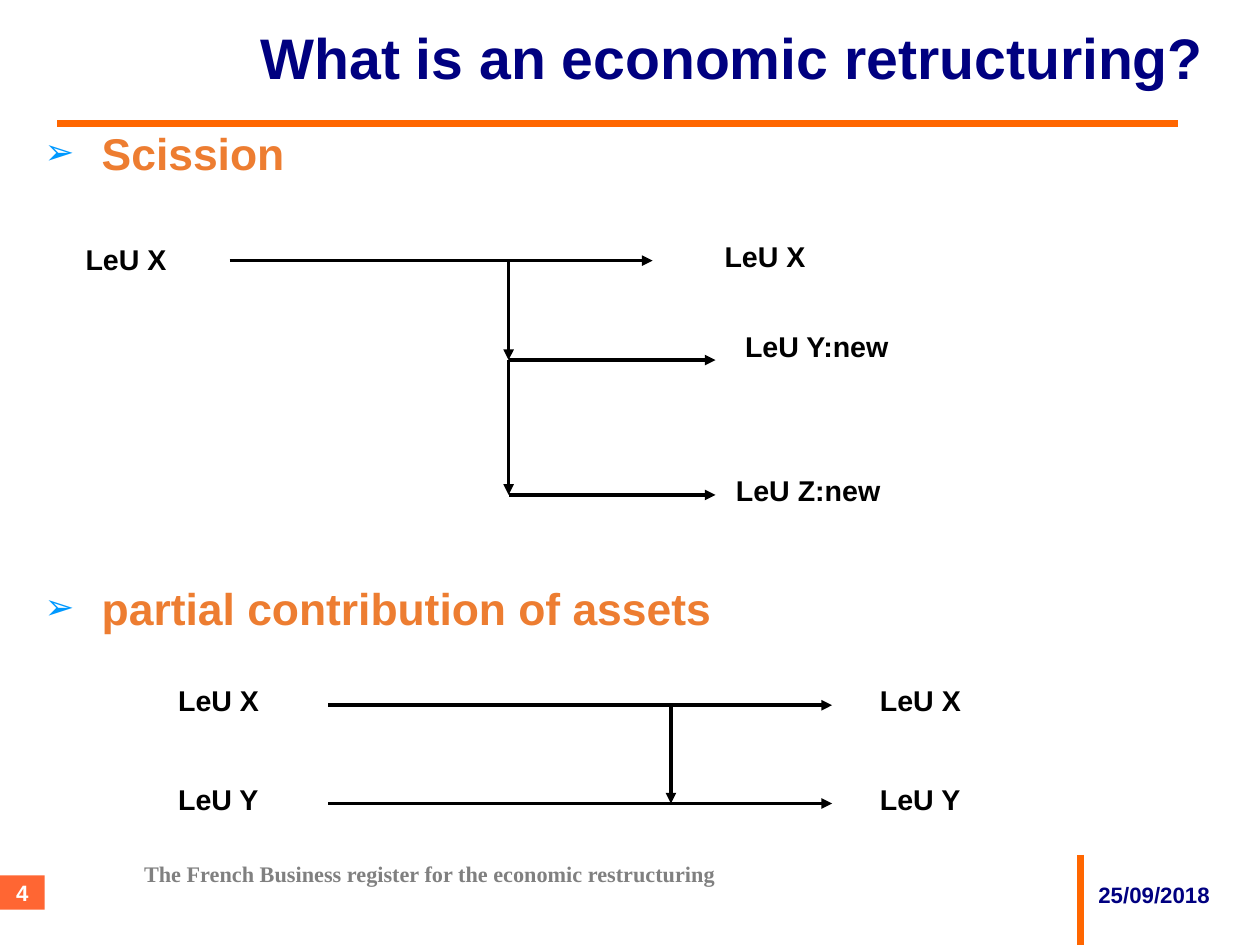
import pptx
import pptx.util
import pptx.dml.color
import pptx.enum.shapes
import pptx.enum.text
import pptx.oxml.ns
from dataclasses import dataclass
from lxml import etree

Inches = pptx.util.Inches
Pt = pptx.util.Pt
Anchor = pptx.enum.text.MSO_ANCHOR
Align = pptx.enum.text.PP_ALIGN
qn = pptx.oxml.ns.qn


@dataclass(frozen=True)
class Theme:
    navy: str = "000080"
    orange: str = "FF6600"
    badge: str = "FF6633"
    accent: str = "ED7D31"
    bullet: str = "0099FF"
    black: str = "000000"
    gray: str = "808080"
    white: str = "FFFFFF"
    sans: str = "Arial"
    serif: str = "Times New Roman"
    title: int = 36
    head: int = 28
    label: int = 18
    small: int = 14
    rule: float = 4.5
    arrow: float = 2.25


theme = Theme()


def rgb(color):
    return pptx.dml.color.RGBColor.from_string(color)


def assign(item, values):
    for name, value in values.items():
        setattr(item, name, value)


def write(shape, text, size, color, face=theme.sans, inset=(0, 0),
          anchor=Anchor.TOP, align=Align.LEFT, bullet=False):
    """Fill a shape with one styled paragraph."""
    frame = shape.text_frame
    side, edge = map(Inches, inset)
    assign(frame, {
        "word_wrap": True, "vertical_anchor": anchor,
        "margin_left": side, "margin_right": side,
        "margin_top": edge, "margin_bottom": edge,
    })
    para = frame.paragraphs[0]
    para.alignment = align
    if bullet:
        add_bullet(para)
    run = para.add_run()
    run.text = text
    assign(run.font, {"name": face, "size": Pt(size), "bold": True})
    run.font.color.rgb = rgb(color)


def add_bullet(para):
    props = para._p.get_or_add_pPr()
    props.set("marL", str(Inches(0.5)))
    props.set("indent", str(-Inches(0.5)))
    tint = etree.SubElement(props, qn("a:buClr"))
    etree.SubElement(tint, qn("a:srgbClr"), val=theme.bullet)
    etree.SubElement(props, qn("a:buSzPct"), val="80000")
    etree.SubElement(props, qn("a:buFont"), typeface=theme.sans)
    etree.SubElement(props, qn("a:buChar"), char="➢")


def place(slide, box, x, y, w, h):
    """Add a text box at an offset inside a region."""
    return slide.shapes.add_textbox(
        Inches(box[0] + x), Inches(box[1] + y), Inches(w), Inches(h))


def label(slide, box, text, x, y):
    write(place(slide, box, x, y, 1.65, 0.4), text, theme.label,
          theme.black, inset=(0.1, 0.05))


def heading(slide, box, text):
    write(place(slide, box, 0, 0, box[2], 0.5), text, theme.head,
          theme.accent, bullet=True)


def line(slide, box, start, end, color=theme.black, width=theme.arrow,
         arrow=True):
    """Draw a straight line between two offsets inside a region."""
    link = slide.shapes.add_connector(
        pptx.enum.shapes.MSO_CONNECTOR.STRAIGHT,
        Inches(box[0] + start[0]), Inches(box[1] + start[1]),
        Inches(box[0] + end[0]), Inches(box[1] + end[1]))
    link.line.color.rgb = rgb(color)
    link.line.width = Pt(width)
    props = link._element.spPr
    if arrow:
        etree.SubElement(props.find(qn("a:ln")), qn("a:tailEnd"),
                         type="triangle")
    etree.SubElement(props, qn("a:effectLst"))


def header(slide, box):
    # Title above its rule
    write(place(slide, box, 1.78, 0, 8.7, 0.61),
          "What is an economic retructuring?", theme.title, theme.navy,
          anchor=Anchor.MIDDLE)
    line(slide, box, (0, box[3]), (box[2], box[3]), theme.orange,
         theme.rule, arrow=False)


def scission(slide, box):
    heading(slide, box, "Scission")
    # One unit splits into three
    trunk, tip = 4.06, 5.87
    top, mid, low = 1.18, 2.05, 3.23
    line(slide, box, (1.62, top), (5.32, top))
    for begin, finish in ((top, mid), (mid, low)):
        line(slide, box, (trunk, begin), (trunk, finish))
        line(slide, box, (trunk, finish), (tip, finish))
    for text, x, y in (("LeU X", 0.26, 0.97), ("LeU X", 5.85, 0.94),
                       ("LeU Y:new", 6.03, 1.73),
                       ("LeU Z:new", 5.95, 2.99)):
        label(slide, box, text, x, y)


def transfer(slide, box):
    heading(slide, box, "partial contribution of assets")
    # Two units continue, with a flow from X to Y
    rows = {"LeU X": 1.09, "LeU Y": 1.95}
    for text, y in rows.items():
        line(slide, box, (2.48, y), (6.89, y))
        for x in (1.07, 7.21):
            label(slide, box, text, x, y - 0.24)
    top, low = rows.values()
    line(slide, box, (5.48, top), (5.48, low))


def footer(slide, box, page):
    # Running title
    write(place(slide, box, 1.26, 0.05, 7.95, 0.57),
          "The French Business register for the economic restructuring",
          theme.small, theme.gray, theme.serif)
    # Page badge
    badge = slide.shapes.add_shape(
        pptx.enum.shapes.MSO_SHAPE.RECTANGLE, Inches(box[0]),
        Inches(box[1] + 0.18), Inches(0.39), Inches(0.3))
    badge.shadow.inherit = False
    badge.fill.solid()
    badge.fill.fore_color.rgb = rgb(theme.badge)
    badge.line.fill.background()
    write(badge, page, theme.small, theme.white, anchor=Anchor.MIDDLE,
          align=Align.CENTER)
    # Date beside its rule
    line(slide, box, (9.45, 0), (9.45, box[3]), theme.orange, theme.rule,
         arrow=False)
    write(place(slide, box, 9.61, 0.06, 1.26, 0.57), "25/09/2018",
          theme.small, theme.navy, anchor=Anchor.MIDDLE)


def main():
    deck = pptx.Presentation()
    # A page of 28 by 21 centimetres
    deck.slide_width = Inches(28 / 2.54)
    deck.slide_height = Inches(21 / 2.54)
    slide = deck.slides.add_slide(deck.slide_layouts[6])
    header(slide, (0.5, 0.19, 9.81, 0.89))
    scission(slide, (0.39, 1.1, 10.31, 3.9))
    transfer(slide, (0.39, 5.08, 10.31, 2.3))
    footer(slide, (0, 7.48, 11.02, 0.79), "4")
    deck.save("out.pptx")


if __name__ == "__main__":
    main()
